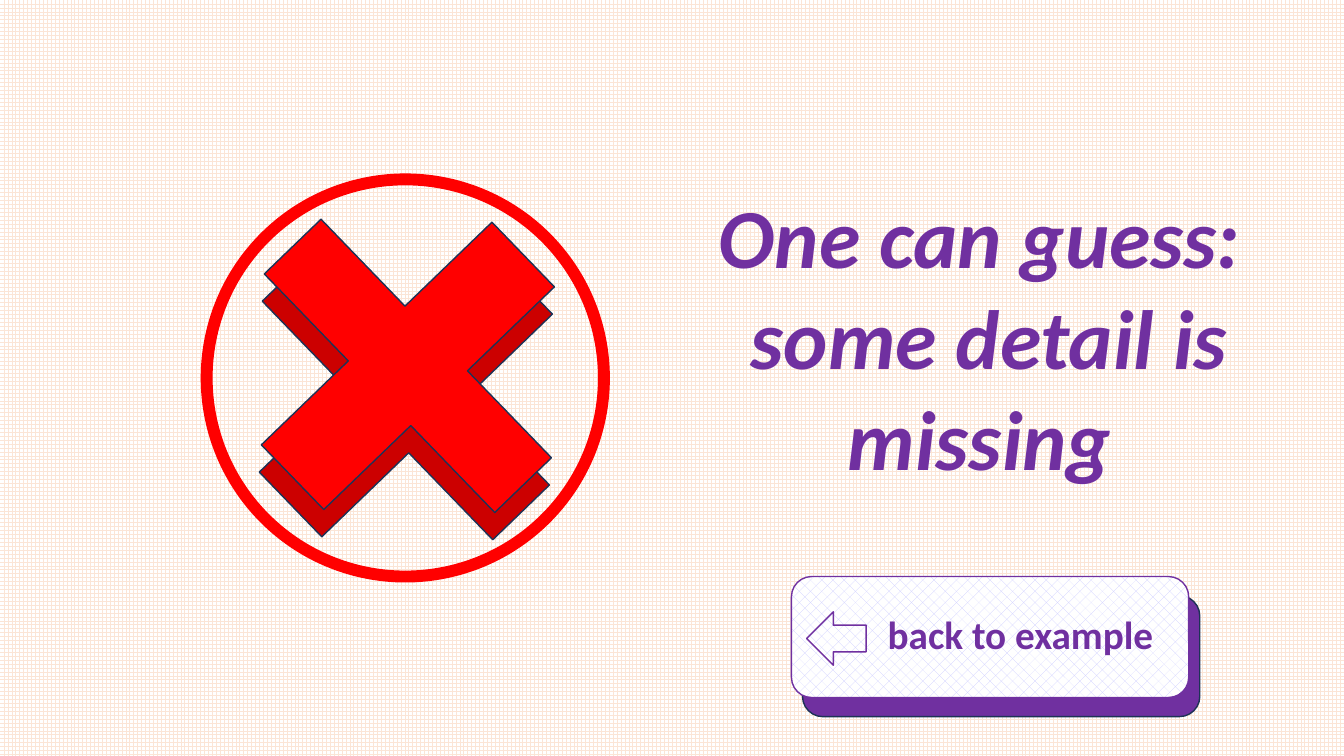
from lxml import etree
from pptx import Presentation
from pptx.dml.color import RGBColor
from pptx.enum.dml import MSO_PATTERN
from pptx.enum.shapes import MSO_SHAPE
from pptx.enum.text import MSO_ANCHOR, MSO_AUTO_SIZE, PP_ALIGN
from pptx.oxml.ns import qn
from pptx.util import Inches, Pt

CIRCLE = MSO_SHAPE.FLOWCHART_CONNECTOR
CROSS = MSO_SHAPE.CROSS
ROUNDED = MSO_SHAPE.ROUNDED_RECTANGLE
LEFT_ARROW = MSO_SHAPE.LEFT_ARROW
LARGE_GRID = MSO_PATTERN.LARGE_GRID
DOTS = MSO_PATTERN.PERCENT_25
TOP, MIDDLE = MSO_ANCHOR.TOP, MSO_ANCHOR.MIDDLE
GROW = MSO_AUTO_SIZE.SHAPE_TO_FIT_TEXT
CENTER = PP_ALIGN.CENTER

PURPLE = RGBColor(0x70, 0x30, 0xA0)
RED = RGBColor(0xFF, 0x00, 0x00)
DARK_RED = RGBColor(0xCC, 0x00, 0x00)
NAVY = RGBColor(0x1E, 0x32, 0x56)
PEACH = RGBColor(0xFB, 0xE5, 0xD6)
LILAC = RGBColor(0xCC, 0xCC, 0xFF)
WHITE = RGBColor(0xFF, 0xFF, 0xFF)

FONT = "Calibri"
TITLE_ONLY = 5
COLUMNS, ROWS = 133.3, 75


class Page:
    def __init__(self, deck):
        self.column = deck.slide_width / COLUMNS
        self.row = deck.slide_height / ROWS
        self.slide = deck.slides.add_slide(deck.slide_layouts[TITLE_ONLY])

    def cells(self, left, top, width, height):
        """Turn grid columns and rows into slide lengths."""
        return (round(left * self.column), round(top * self.row),
                round(width * self.column), round(height * self.row))

    def pattern(self, fill, pattern, ink):
        fill.patterned()
        fill.pattern = pattern
        fill.fore_color.rgb = ink
        fill.back_color.rgb = WHITE

    def style_text(self, para, size, italic=False):
        para.alignment = CENTER
        for span in para.runs:
            span.font.name = FONT
            span.font.size = Pt(size)
            span.font.bold = True
            span.font.italic = italic
            span.font.color.rgb = PURPLE

    def outline_text(self, para):
        for span in para.runs:
            line = etree.Element(qn("a:ln"), w=str(Pt(1)))
            fill = etree.SubElement(line, qn("a:solidFill"))
            etree.SubElement(fill, qn("a:srgbClr"), val=str(PURPLE))
            span.font._element.insert(0, line)

    def title(self, text, place):
        box = self.slide.shapes.title
        box.left, box.top, box.width, box.height = self.cells(*place)
        frame = box.text_frame
        frame.text = text
        frame.word_wrap = True
        frame.auto_size = GROW
        frame.vertical_anchor = TOP
        for para in frame.paragraphs:
            self.style_text(para, 60, italic=True)
            self.outline_text(para)

    def shape(self, kind, place, fill=None, line=NAVY, weight=1, turn=0):
        shape = self.slide.shapes.add_shape(kind, *self.cells(*place))
        shape.shadow.inherit = False
        shape.rotation = turn
        shape.line.color.rgb = line
        shape.line.width = Pt(weight)
        if fill is None:
            shape.fill.background()
        else:
            shape.fill.solid()
            shape.fill.fore_color.rgb = fill
        return shape

    def cross(self, left, top, fill):
        cross = self.shape(CROSS, (left, top, 32.9, 31.8), fill, turn=46)
        cross.adjustments[0] = 0.377

    def button(self, text, left, top):
        width, height = 39.4, 12
        self.shape(ROUNDED, (left + 1.1, top + 1.9, width, height), PURPLE)
        face = self.shape(ROUNDED, (left, top, width, height), line=PURPLE)
        self.pattern(face.fill, DOTS, LILAC)
        frame = face.text_frame
        frame.text = text
        frame.word_wrap = True
        frame.vertical_anchor = MIDDLE
        frame.margin_left = round(7 * self.column)
        para = frame.paragraphs[0]
        para.line_spacing = 0.9
        para.space_before = Pt(10)
        self.style_text(para, 28)
        self.shape(LEFT_ARROW, (left + 1.5, top + 3.5, 5.9, 5.3), line=PURPLE)


def main():
    deck = Presentation()
    deck.slide_width, deck.slide_height = Inches(13.33), Inches(7.5)
    page = Page(deck)
    page.pattern(page.slide.background.fill, LARGE_GRID, PEACH)
    page.title("One can guess: \nsome detail is missing ", (67.1, 17.8, 62, 31.3))
    page.shape(CIRCLE, (20.5, 17.8, 39.4, 39.4), line=RED, weight=8.5)
    page.cross(23.8, 23.1, DARK_RED)
    page.cross(24, 20.4, RED)
    page.button("back to example", 78.5, 57.2)
    deck.save("out.pptx")


if __name__ == "__main__":
    main()
